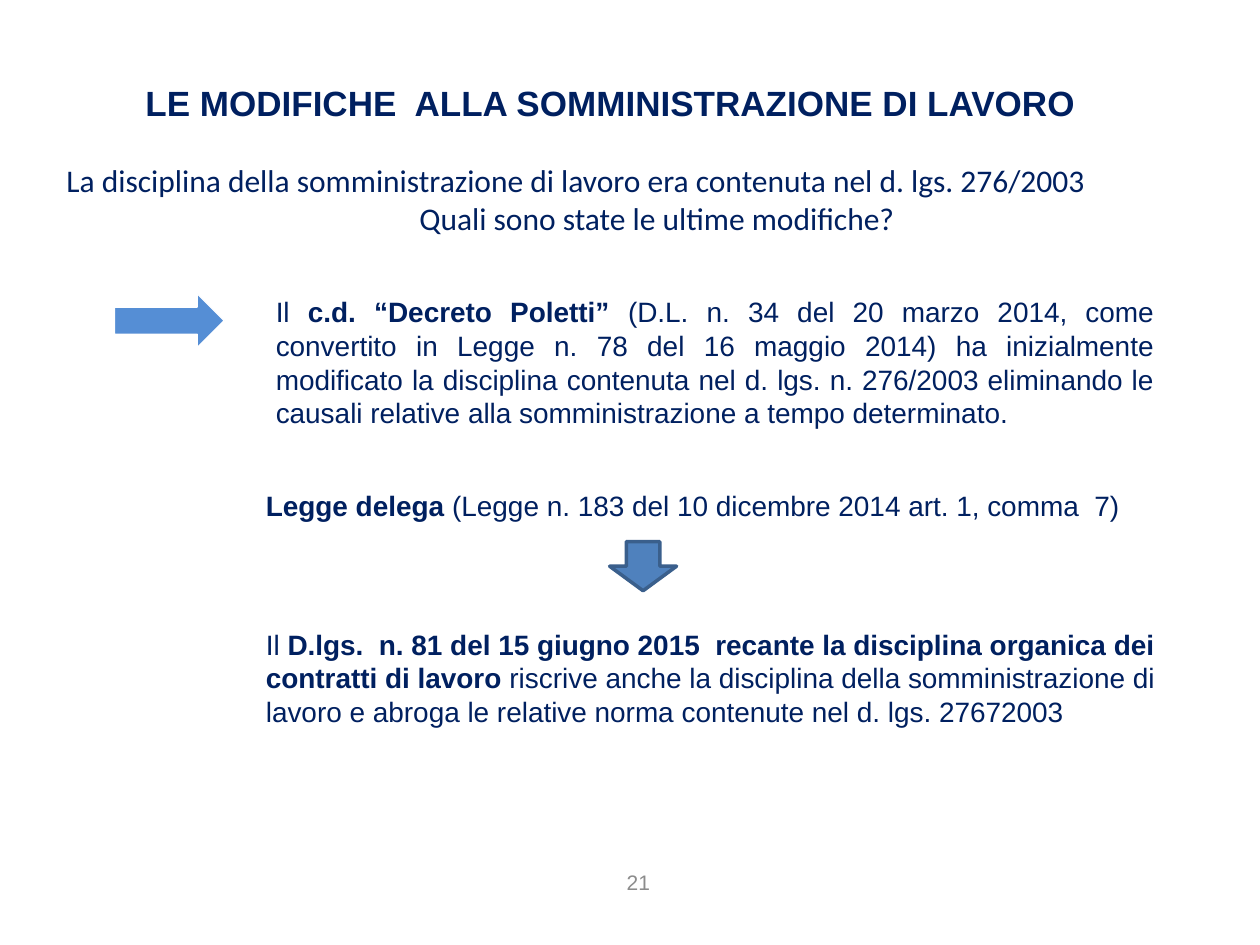
from dataclasses import dataclass

import pptx
import pptx.dml.color
import pptx.enum.shapes
import pptx.enum.text
import pptx.util

Cm = pptx.util.Cm
Align = pptx.enum.text.PP_ALIGN
Anchor = pptx.enum.text.MSO_ANCHOR
Preset = pptx.enum.shapes.MSO_SHAPE

COLORS = {
    "navy": "002060",
    "gray": "8C8C8C",
    "light_blue": "558ED5",
    "blue": "4F81BD",
    "dark_blue": "3A5F8C",
    "white": "FFFFFF",
}


@dataclass
class Area:
    left: float
    top: float
    width: float
    height: float

    def lengths(self) -> list:
        return [Cm(value) for value in (self.left, self.top, self.width, self.height)]


@dataclass
class Para:
    spans: list[tuple[str, bool]]  # text, bold
    align: Align = Align.LEFT


@dataclass
class TextBlock:
    area: Area
    paras: list[Para]
    size: int = 16
    font: str = "Arial"
    color: str = "navy"
    anchor: Anchor = Anchor.TOP


@dataclass
class Arrow:
    preset: Preset
    area: Area
    fill: str
    line: str
    line_width: float


def rgb(name: str) -> pptx.dml.color.RGBColor:
    return pptx.dml.color.RGBColor.from_string(COLORS[name])


def draw_text(page, block: TextBlock) -> None:
    box = page.shapes.add_textbox(*block.area.lengths())
    frame = box.text_frame
    frame.word_wrap = True
    frame.vertical_anchor = block.anchor
    frame.text = "\n".join("" for _ in block.paras)
    for para, content in zip(frame.paragraphs, block.paras):
        para.alignment = content.align
        for text, bold in content.spans:
            span = para.add_run()
            span.text = text
            span.font.name = block.font
            span.font.size = pptx.util.Pt(block.size)
            span.font.bold = bold
            span.font.color.rgb = rgb(block.color)


def draw_arrow(page, arrow: Arrow) -> None:
    shape = page.shapes.add_shape(arrow.preset, *arrow.area.lengths())
    shape.shadow.inherit = False
    shape.fill.solid()
    shape.fill.fore_color.rgb = rgb(arrow.fill)
    shape.line.color.rgb = rgb(arrow.line)
    shape.line.width = pptx.util.Pt(arrow.line_width)


TEXT_BLOCKS = [
    # Title
    TextBlock(
        Area(0, 1.52, 24.61, 1.12),
        [Para([("LE MODIFICHE  ALLA SOMMINISTRAZIONE DI LAVORO", True)], Align.CENTER)],
        size=20,
    ),
    # Opening question
    TextBlock(
        Area(1.09, 3.12, 24.31, 1.8),
        [
            Para([("La disciplina della somministrazione di lavoro era contenuta "
                   "nel d. lgs. 276/2003", False)]),
            Para([("Quali sono state le ultime modifiche?", False)], Align.CENTER),
        ],
        size=18,
        font="Calibri",
    ),
    # The three laws
    TextBlock(
        Area(5.31, 5.82, 18.21, 3),
        [Para([
            ("Il", False),
            (" c.d. “Decreto Poletti” ", True),
            ("(D.L. n. 34 del 20 marzo 2014, come convertito in Legge n. 78 del "
             "16 maggio 2014) ha inizialmente modificato la disciplina contenuta "
             "nel d. lgs. n. 276/2003 eliminando le causali relative alla "
             "somministrazione a tempo determinato.", False),
        ], Align.JUSTIFY)],
    ),
    TextBlock(
        Area(5.11, 9.73, 18.21, 0.94),
        [Para([
            ("Legge delega ", True),
            ("(Legge n. 183 del 10 dicembre 2014 art. 1, comma  7)", False),
        ], Align.JUSTIFY)],
    ),
    TextBlock(
        Area(5.11, 12.52, 19.41, 2.31),
        [Para([
            ("Il", False),
            (" D.lgs.  n. 81 del 15 giugno 2015  recante la disciplina organica "
             "dei contratti di lavoro", True),
            (" riscrive anche la disciplina della somministrazione di lavoro e "
             "abroga le relative norma contenute nel d. lgs. 27672003", False),
        ])],
    ),
    # Page number
    TextBlock(
        Area(9.91, 17.12, 5.92, 1.32),
        [Para([("21", False)], Align.CENTER)],
        size=12,
        color="gray",
        anchor=Anchor.MIDDLE,
    ),
]

ARROWS = [
    Arrow(Preset.RIGHT_ARROW, Area(2.31, 5.92, 2.21, 1.09), "light_blue", "white", 0.75),
    Arrow(Preset.DOWN_ARROW, Area(12.29, 10.92, 1.35, 0.99), "blue", "dark_blue", 2),
]


def main() -> None:
    deck = pptx.Presentation()
    deck.slide_width, deck.slide_height = Cm(25.4), Cm(19.05)
    page = deck.slides.add_slide(deck.slide_layouts[6])
    for block in TEXT_BLOCKS:
        draw_text(page, block)
    for arrow in ARROWS:
        draw_arrow(page, arrow)
    deck.save("out.pptx")


if __name__ == "__main__":
    main()
